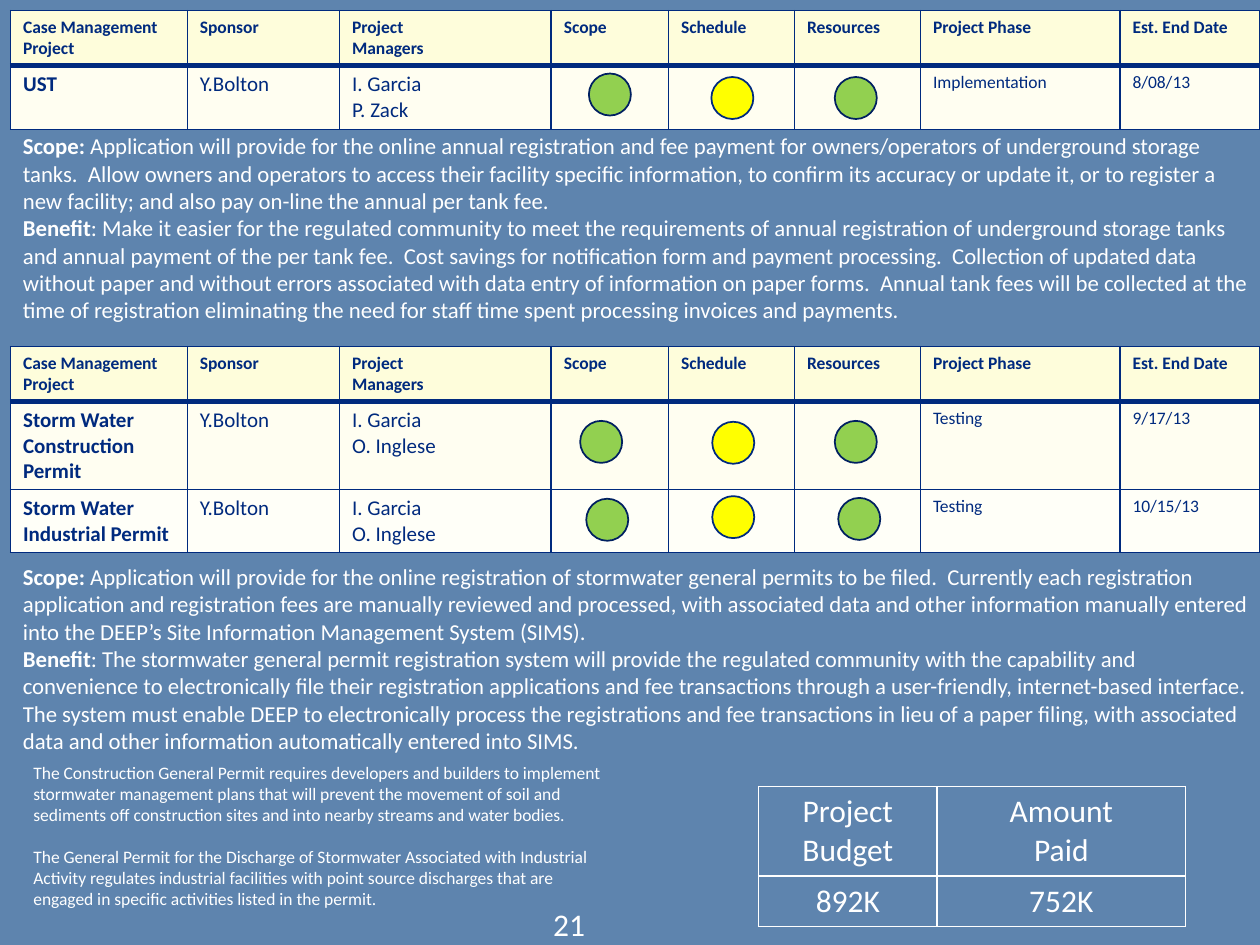
from dataclasses import dataclass
from lxml.etree import SubElement
from pptx import Presentation
from pptx.dml.color import RGBColor as RGB
from pptx.enum.shapes import MSO_SHAPE as SHAPE
from pptx.enum.text import PP_ALIGN as ALIGN
from pptx.oxml.ns import qn
from pptx.util import Pt


@dataclass(frozen=True)
class Theme:
    font: str = "Calibri"
    back: str = "5E84AE"
    white: str = "FFFFFF"
    navy: str = "002A7E"
    dot_line: str = "002060"
    head_fill: str = "FEFDDB"
    row_fills: tuple = ("FFFEF1", "FFFFF8")
    green: str = "92D050"
    yellow: str = "FFFF00"
    small: int = 10
    name: int = 12
    body: int = 13
    large: int = 18


T = Theme()
COLS = (101, 87, 121, 67, 72, 72, 114, 80)
HEADINGS = ("Case Management Project", "Sponsor", "Project\nManagers", "Scope",
            "Schedule", "Resources", "Project Phase", "Est. End Date")
HEAD_HEIGHT = 31.4
DOT = 24
DOT_COLORS = (T.green, T.yellow, T.green)


def add_run(p, text, size, color, bold=False):
    r = p.add_run()
    r.text = text
    r.font.color.rgb = RGB.from_string(color)
    for key, value in dict(name=T.font, size=Pt(size), bold=bold).items():
        setattr(r.font, key, value)


def add_text(s, box, paragraphs, size, gap=0):
    """Each paragraph is a list of (text, bold) runs."""
    tf = s.shapes.add_textbox(*map(Pt, box)).text_frame
    tf.word_wrap = True
    for i, runs in enumerate(paragraphs):
        p = tf.add_paragraph() if i else tf.paragraphs[0]
        p.space_before = Pt(gap if i else 0)
        for text, bold in runs:
            add_run(p, text, size, T.white, bold)


def add_grid(s, left, top, cols, rows):
    """Table with plain cells and the given column widths and row heights."""
    box = (left, top, sum(cols), sum(rows))
    table = s.shapes.add_table(len(rows), len(cols), *map(Pt, box)).table
    table.first_row = table.horz_banding = False
    for col, width in zip(table.columns, cols):
        col.width = Pt(width)
    for row, height in zip(table.rows, rows):
        row.height = Pt(height)
    return table


def set_cell(cell, text, size, color, bold=False, fill=None, align=ALIGN.LEFT,
             top=1, bottom=1):
    # Borders come before the fill in the cell properties
    tc_pr = cell._tc.get_or_add_tcPr()
    for side, width in dict(L=1, R=1, T=top, B=bottom).items():
        ln = SubElement(tc_pr, qn(f"a:ln{side}"), w=str(Pt(width)))
        solid = SubElement(ln, qn("a:solidFill"))
        SubElement(solid, qn("a:srgbClr"), val=color)
    if fill:
        cell.fill.solid()
        cell.fill.fore_color.rgb = RGB.from_string(fill)
    else:
        cell.fill.background()
    tf = cell.text_frame
    for i, line in enumerate(text.split("\n") if text else ()):
        p = tf.add_paragraph() if i else tf.paragraphs[0]
        p.alignment = align
        add_run(p, line, size, color, bold)


def add_dot(s, x, y, color):
    sp = s.shapes.add_shape(SHAPE.FLOWCHART_CONNECTOR, *map(Pt, (x, y, DOT, DOT)))
    sp.shadow.inherit = False
    sp.fill.solid()
    sp.fill.fore_color.rgb = RGB.from_string(color)
    sp.line.color.rgb = RGB.from_string(T.navy if color == T.yellow else T.dot_line)
    sp.line.width = Pt(1)


def add_status(s, left, top, projects):
    """Project table with its status dots, placed from the table's corner."""
    heights = [HEAD_HEIGHT] + [project["height"] for project in projects]
    table = add_grid(s, left, top, COLS, heights)
    for c, heading in enumerate(HEADINGS):
        set_cell(table.cell(0, c), heading, T.small, T.navy, True, T.head_fill, bottom=3)
    for i, project in enumerate(projects):
        name, sponsor, managers, phase, end = project["values"]
        values = (name, sponsor, managers, "", "", "", phase, end)
        for c, value in enumerate(values):
            set_cell(table.cell(i + 1, c), value, T.small if c > 5 else T.name, T.navy,
                     c == 0, T.row_fills[i], top=1 if i else 3)
        for (x, y), color in zip(project["dots"], DOT_COLORS):
            add_dot(s, left + x, top + y, color)


def add_summary(s, box, scope, benefit):
    add_text(s, box, [[("Scope: ", True), (scope, False)],
                      [("Benefit", True), (": " + benefit, False)]], T.body)


def add_budget(s, left, top):
    rows = (("Project Budget", "Amount\nPaid"), ("892K", "752K"))
    table = add_grid(s, left, top, (102, 142), (51, 29))
    for r, row in enumerate(rows):
        for c, value in enumerate(row):
            set_cell(table.cell(r, c), value, T.large, T.white, align=ALIGN.CENTER)


UST = [dict(values=("UST", "Y.Bolton", "I. Garcia\nP. Zack", "Implementation", "8/08/13"),
            height=36, dots=((330.5, 36), (400.5, 38), (471, 38)))]
STORM_WATER = [
    dict(values=("Storm Water Construction Permit", "Y.Bolton", "I. Garcia\nO. Inglese",
                 "Testing", "9/17/13"),
         height=50, dots=((325.5, 42.5), (401, 43), (471, 42.5))),
    dict(values=("Storm Water Industrial Permit", "Y.Bolton", "I. Garcia\nO. Inglese",
                 "Testing", "10/15/13"),
         height=36, dots=((329, 87), (401, 85.5), (473, 86.5))),
]
UST_SCOPE = (
    "Application will provide for the online annual registration and fee payment for "
    "owners/operators of underground storage tanks.  Allow owners and operators to access "
    "their facility specific information, to confirm its accuracy or update it, or to "
    "register a new facility; and also pay on-line the annual per tank fee.")
UST_BENEFIT = (
    "Make it easier for the regulated community to meet the requirements of annual "
    "registration of underground storage tanks and annual payment of the per tank fee.  "
    "Cost savings for notification form and payment processing.  Collection of updated data "
    "without paper and without errors associated with data entry of information on paper "
    "forms.  Annual tank fees will be collected at the time of registration eliminating the "
    "need for staff time spent processing invoices and payments.")
STORM_SCOPE = (
    "Application will provide for the online registration of stormwater general permits to "
    "be filed.  Currently each registration application and registration fees are manually "
    "reviewed and processed, with associated data and other information manually entered "
    "into the DEEP’s Site Information Management System (SIMS).")
STORM_BENEFIT = (
    "The stormwater general permit registration system will provide the regulated community "
    "with the capability and convenience to electronically file their registration "
    "applications and fee transactions through a user-friendly, internet-based interface. "
    "The system must enable DEEP to electronically process the registrations and fee "
    "transactions in lieu of a paper filing, with associated data and other information "
    "automatically entered into SIMS.")
PERMIT_NOTES = (
    "The Construction General Permit requires developers and builders to implement "
    "stormwater management plans that will prevent the movement of soil and sediments off "
    "construction sites and into nearby streams and water bodies.",
    "The General Permit for the Discharge of Stormwater Associated with Industrial Activity "
    "regulates industrial facilities with point source discharges that are engaged in "
    "specific activities listed in the permit.")


def main():
    prs = Presentation()
    prs.slide_width, prs.slide_height = Pt(720), Pt(540)
    s = prs.slides.add_slide(prs.slide_layouts[6])
    s.background.fill.solid()
    s.background.fill.fore_color.rgb = RGB.from_string(T.back)

    # Underground storage tanks
    add_status(s, 6, 6, UST)
    add_summary(s, (6, 72, 714, 117), UST_SCOPE, UST_BENEFIT)

    # Storm water permits
    add_status(s, 6, 198, STORM_WATER)
    add_summary(s, (6, 318, 714, 117), STORM_SCOPE, STORM_BENEFIT)

    # Permit notes, budget and page number
    add_text(s, (12, 432, 342, 95), [[(note, False)] for note in PERMIT_NOTES],
             T.small, gap=12)
    add_budget(s, 433.5, 449.5)
    add_text(s, (309, 513.5, 39, 25), [[("21", False)]], T.large)
    prs.save("out.pptx")


if __name__ == "__main__":
    main()
